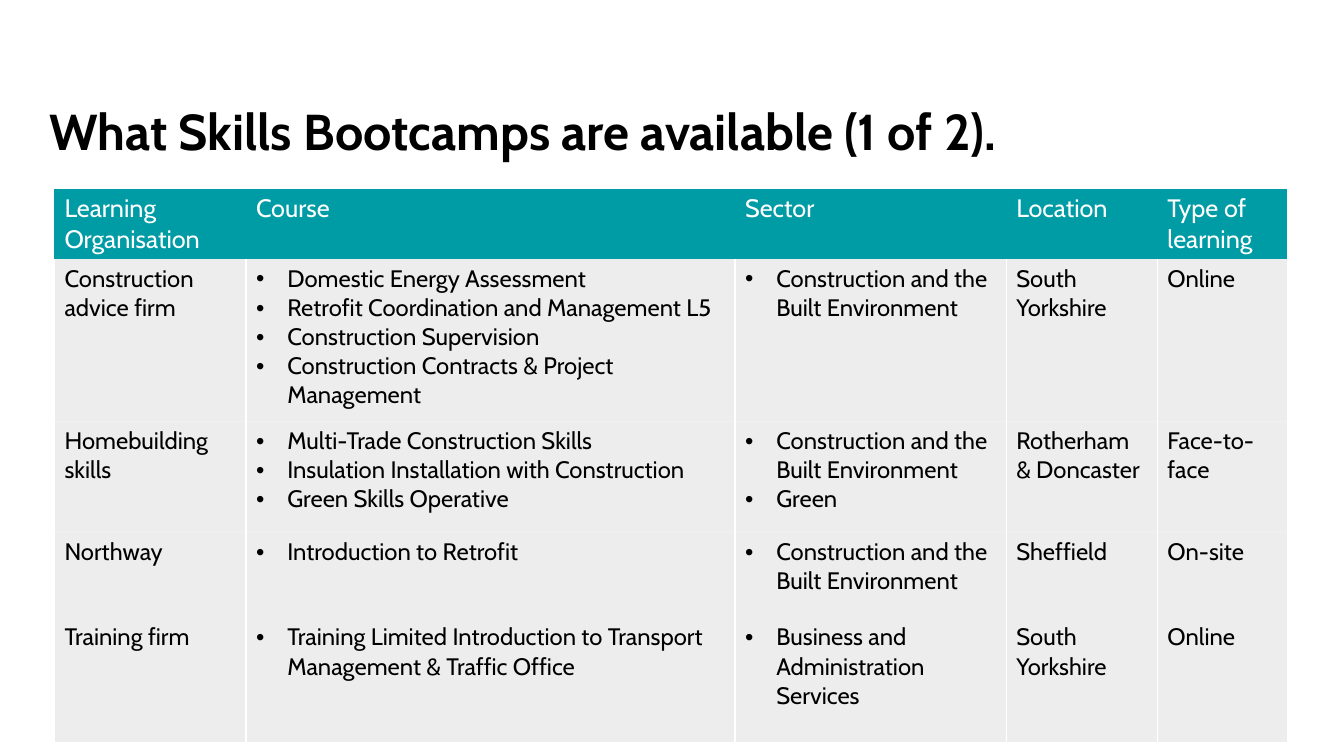
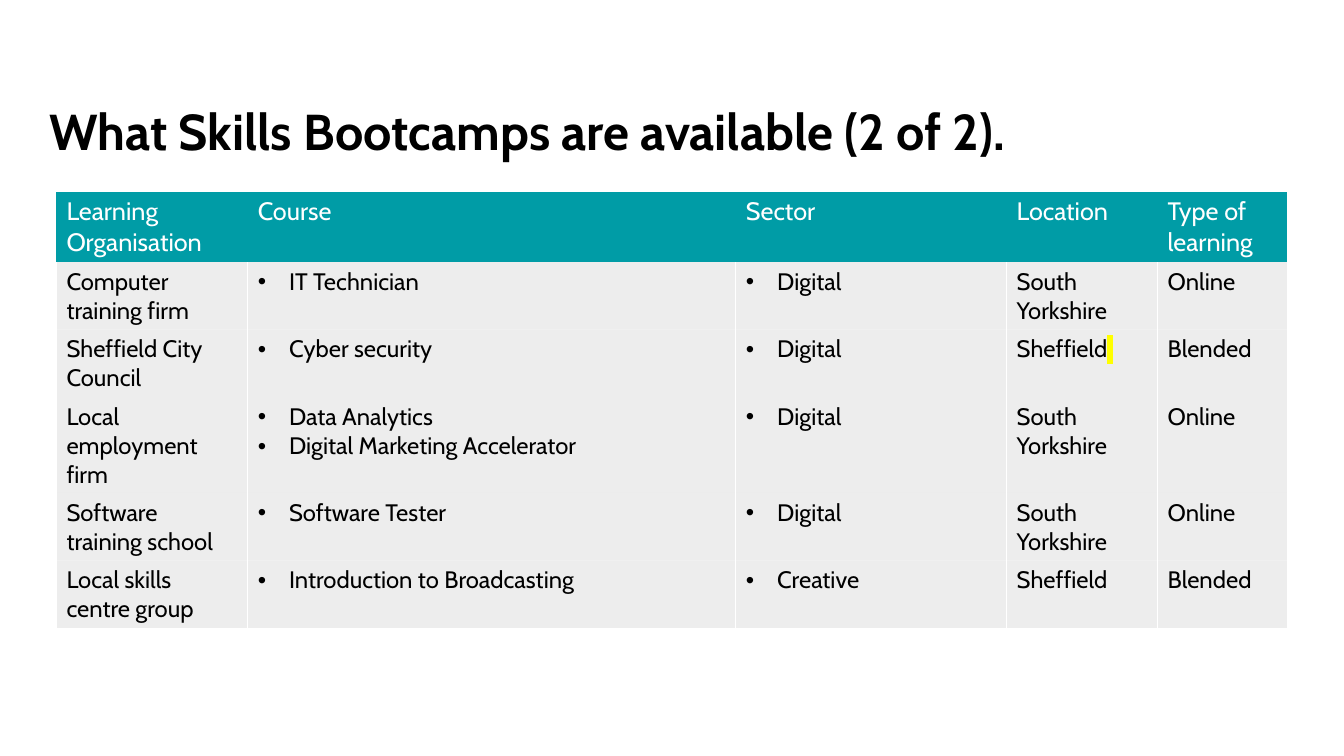
import lxml.etree
import pptx
import pptx.dml.color
import pptx.enum.text
import pptx.oxml.ns
import pptx.util

COLORS = {"ink": "000000", "paper": "FFFFFF", "header": "009CA6",
          "row": "E8E8E8", "marker": "FFFF00"}
FONT = "Cabin"
WIDTH, HEIGHT = 13.33, 7.5
TITLE_BOX = (0.39, 0.94, 12.38, 0.71)
COLUMN_PARTS = (1.9, 4.85, 2.69, 1.5, 1.29)
BULLETED_COLUMNS = (1, 2)
HEADER_HEIGHT = 0.7
INDENT = 0.31
NO_STYLE = "{2D5ABB26-0587-4C30-8999-92F81FD0307C}"

HEADINGS = ("Learning Organisation", "Course", "Sector", "Location", "Type of learning")
BUILT = "Construction and the Built Environment"

SLIDES = [
    {
        "title": "What Skills Bootcamps are available (1 of 2).",
        "box": (0.54, 1.87, 12.23),
        "heights": (1.61, 1.1, 0.85, 1.23),
        "rows": [
            ("Construction advice firm",
             "Domestic Energy Assessment\nRetrofit Coordination and Management L5\n"
             "Construction Supervision\nConstruction Contracts & Project Management",
             BUILT, "South Yorkshire", "Online"),
            ("Homebuilding skills",
             "Multi-Trade Construction Skills\nInsulation Installation with Construction\n"
             "Green Skills Operative",
             BUILT + "\nGreen", "Rotherham & Doncaster", "Face-to-face"),
            ("Northway", "Introduction to Retrofit", BUILT, "Sheffield", "On-site"),
            ("Training firm",
             "Training Limited Introduction to Transport Management & Traffic Office",
             "Business and Administration Services", "South Yorkshire", "Online"),
        ],
    },
    {
        "title": "What Skills Bootcamps are available (2 of 2).",
        "box": (0.56, 1.9, 12.21),
        "heights": (0.67,) * 5,
        "marked": (2, 3),
        "rows": [
            ("Computer training firm", "IT Technician", "Digital", "South Yorkshire", "Online"),
            ("Sheffield City Council", "Cyber security", "Digital", "Sheffield", "Blended"),
            ("Local employment firm", "Data Analytics\nDigital Marketing Accelerator",
             "Digital", "South Yorkshire", "Online"),
            ("Software training school", "Software Tester", "Digital",
             "South Yorkshire", "Online"),
            ("Local skills centre group", "Introduction to Broadcasting", "Creative",
             "Sheffield", "Blended"),
        ],
    },
]


def inches(value):
    """Return a length in inches."""
    return pptx.util.Inches(value)


def add_element(parent, tag, **attributes):
    """Append a drawing element to a parent."""
    return lxml.etree.SubElement(parent, pptx.oxml.ns.qn(tag), attributes)


def style_span(span, size, color, bold=False):
    """Format one run."""
    span.font.size = pptx.util.Pt(size)
    span.font.bold = bold
    span.font.color.rgb = pptx.dml.color.RGBColor.from_string(COLORS[color])
    span.font.name = FONT


def add_bullet(para):
    """Give a paragraph a hanging bullet."""
    properties = para._p.get_or_add_pPr()
    properties.set("marL", str(inches(INDENT)))
    properties.set("indent", str(-inches(INDENT)))
    add_element(properties, "a:buFont", typeface="Arial")
    add_element(properties, "a:buChar", char="•")


def add_marker(para):
    """Append a highlighted space to a paragraph."""
    span = para.add_run()
    span.text = " "
    style_span(span, 17, "ink")
    highlight = lxml.etree.Element(pptx.oxml.ns.qn("a:highlight"))
    add_element(highlight, "a:srgbClr", val=COLORS["marker"])
    span._r.rPr.find(pptx.oxml.ns.qn("a:solidFill")).addnext(highlight)


def add_side_borders(cell):
    """Draw thin light lines on the left and right of a cell."""
    properties = cell._tc.get_or_add_tcPr()
    for tag in ("a:lnL", "a:lnR"):
        line = add_element(properties, tag, w=str(pptx.util.Pt(1)))
        add_element(add_element(line, "a:solidFill"), "a:srgbClr", val=COLORS["paper"])


def fill_cell(cell, text, is_header, bulleted):
    """Write and format one table cell."""
    if not is_header:
        add_side_borders(cell)
    cell.fill.solid()
    cell.fill.fore_color.rgb = pptx.dml.color.RGBColor.from_string(
        COLORS["header" if is_header else "row"])
    if not is_header:
        fill_color = cell._tc.tcPr.findall(pptx.oxml.ns.qn("a:solidFill"))[0][0]
        add_element(fill_color, "a:alpha", val="75000")
    cell.text_frame.text = text
    for para in cell.text_frame.paragraphs:
        if bulleted:
            add_bullet(para)
        for span in para.runs:
            style_span(span, 18 if is_header else 17, "paper" if is_header else "ink")


def add_title(page, text, box):
    """Place the slide title in its box."""
    frame = page.shapes.add_textbox(*map(inches, box)).text_frame
    frame.word_wrap = True
    frame.auto_size = pptx.enum.text.MSO_AUTO_SIZE.SHAPE_TO_FIT_TEXT
    frame.text = text
    style_span(frame.paragraphs[0].runs[0], 36, "ink", bold=True)


def add_course_table(page, box, rows, heights, marked=None):
    """Place the table of courses from the box's corner across its width."""
    left, top, width = box
    heights = (HEADER_HEIGHT, *heights)
    lines = [HEADINGS, *rows]
    table = page.shapes.add_table(len(lines), len(HEADINGS), inches(left), inches(top),
                                  inches(width), inches(sum(heights))).table
    table.horz_banding = False
    table._tbl.tblPr.find(pptx.oxml.ns.qn("a:tableStyleId")).text = NO_STYLE
    for column, part in zip(table.columns, COLUMN_PARTS):
        column.width = inches(width * part / sum(COLUMN_PARTS))
    for row, height in zip(table.rows, heights):
        row.height = inches(height)
    for row_index, line in enumerate(lines):
        for column_index, text in enumerate(line):
            is_header = row_index == 0
            fill_cell(table.cell(row_index, column_index), text, is_header,
                      not is_header and column_index in BULLETED_COLUMNS)
    if marked:
        add_marker(table.cell(*marked).text_frame.paragraphs[0])


def main():
    """Build and save the deck."""
    deck = pptx.Presentation()
    deck.slide_width, deck.slide_height = inches(WIDTH), inches(HEIGHT)
    for content in SLIDES:
        page = deck.slides.add_slide(deck.slide_layouts[6])
        add_title(page, content["title"], TITLE_BOX)
        add_course_table(page, content["box"], content["rows"], content["heights"],
                         content.get("marked"))
    deck.save("out.pptx")


if __name__ == "__main__":
    main()
